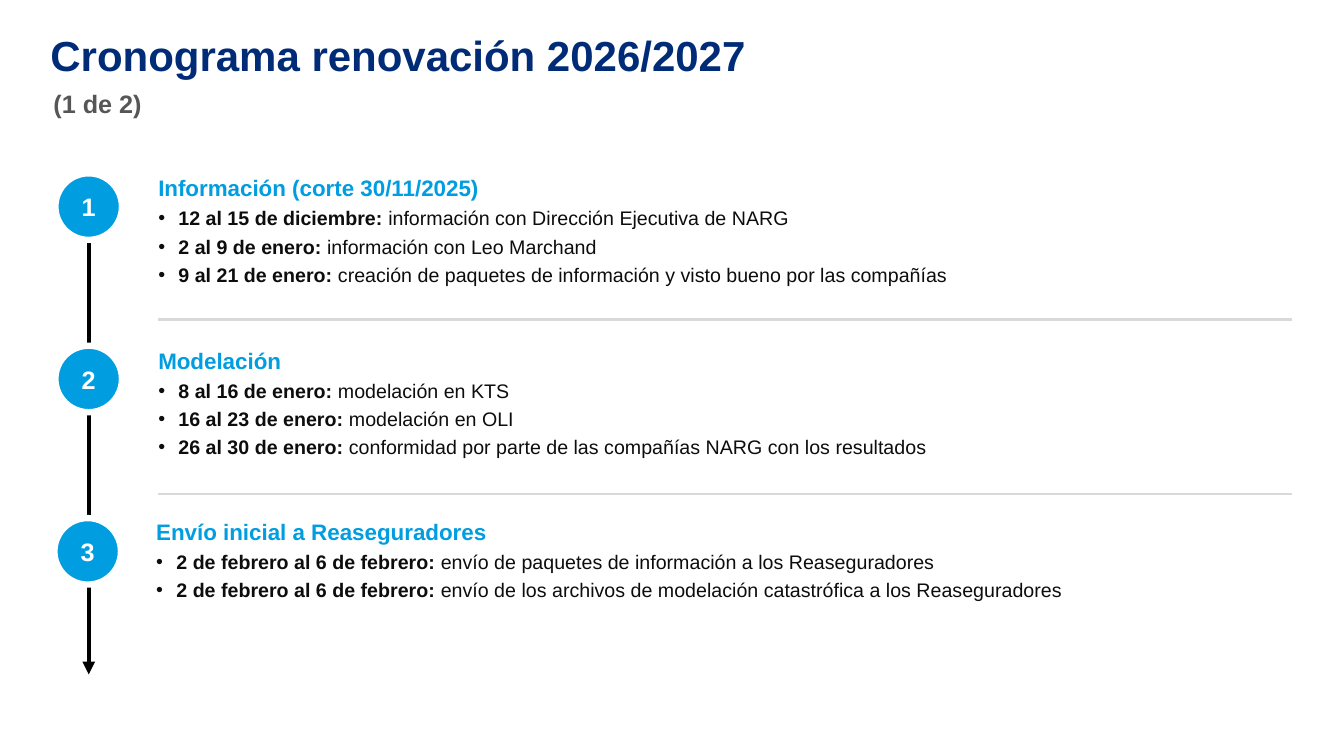
from lxml import etree
from pptx import Presentation
from pptx import util as u
from pptx.dml.color import RGBColor
from pptx.enum import shapes, text
from pptx.oxml.ns import qn

FONT = "Arial"
NAVY, BLUE, GREY, RULE = "002C77", "009DE0", "565656", "D9D9D9"
BLACK, INK, WHITE = "000000", "0D0D0D", "FFFFFF"
CIRCLE = 0.66

# Left edge of the circle, top of the circle, left and top of the text, heading, dated items
STAGES = [
    (0.55, 1.72, 1.57, 1.73, "Información (corte 30/11/2025)", [
        ("12 al 15 de diciembre: ", "información con Dirección Ejecutiva de NARG"),
        ("2 al 9 de enero: ", "información con Leo Marchand"),
        ("9 al 21 de enero: ",
         "creación de paquetes de información y visto bueno por las compañías"),
    ]),
    (0.55, 3.43, 1.57, 3.44, "Modelación", [
        ("8 al 16 de enero: ", "modelación en KTS"),
        ("16 al 23 de enero: ", "modelación en OLI"),
        ("26 al 30 de enero: ",
         "conformidad por parte de las compañías NARG con los resultados"),
    ]),
    (0.54, 5.14, 1.55, 5.14, "Envío inicial a Reaseguradores", [
        ("2 de febrero al 6 de febrero: ",
         "envío de paquetes de información a los Reaseguradores"),
        ("2 de febrero al 6 de febrero: ",
         "envío de los archivos de modelación catastrófica a los Reaseguradores"),
    ]),
]


def color(value):
    return RGBColor.from_string(value)


def add_span(para, words, size, tint, bold=True):
    span = para.add_run()
    span.text = words
    formats = {"name": FONT, "size": u.Pt(size), "bold": bold}
    for name, value in formats.items():
        setattr(span.font, name, value)
    span.font.color.rgb = color(tint)


def set_frame(frame, wrap=True, anchor=text.MSO_ANCHOR.TOP):
    formats = {"margin_left": 0, "margin_top": 0, "margin_right": 0,
               "margin_bottom": 0, "word_wrap": wrap, "vertical_anchor": anchor}
    for name, value in formats.items():
        setattr(frame, name, value)
    return frame


def add_text(page, left, top, width, height):
    box = page.shapes.add_textbox(*map(u.Inches, (left, top, width, height)))
    return set_frame(box.text_frame)


def add_line(page, start, end, tint, width):
    line = page.shapes.add_connector(
        shapes.MSO_CONNECTOR.STRAIGHT, *map(u.Inches, start + end))
    line.line.color.rgb = color(tint)
    line.line.width = u.Pt(width)
    etree.SubElement(line.element.spPr, qn("a:effectLst"))
    return line


def add_bullet(para):
    properties = para._p.get_or_add_pPr()
    indent = u.Inches(0.2)
    properties.set("marL", str(indent))
    properties.set("indent", str(-indent))
    etree.SubElement(properties, qn("a:buFont")).set("typeface", FONT)
    etree.SubElement(properties, qn("a:buChar")).set("char", "•")


def add_header(page, left, top, width):
    title = add_text(page, left, top, width, 0.54).paragraphs[0]
    title.line_spacing = 0.8
    add_span(title, "Cronograma renovación 2026/2027", 30, NAVY)
    subtitle = add_text(page, left + 0.03, top + 0.49, width - 0.03, 0.35)
    add_span(subtitle.paragraphs[0], "(1 de 2)", 18, GREY)


def add_timeline(page, center, top, bottom):
    arrow = add_line(page, (center, top), (center, bottom), BLACK, 3)
    tail = etree.SubElement(arrow.line._get_or_add_ln(), qn("a:tailEnd"))
    tail.set("type", "triangle")


def add_number(page, left, top, number):
    circle = page.shapes.add_shape(
        shapes.MSO_SHAPE.OVAL, *map(u.Inches, (left, top, CIRCLE, CIRCLE)))
    circle.shadow.inherit = False
    circle.fill.solid()
    circle.fill.fore_color.rgb = color(BLUE)
    circle.line.color.rgb = color(WHITE)
    circle.line.width = u.Pt(4.5)
    frame = set_frame(circle.text_frame, False, text.MSO_ANCHOR.MIDDLE)
    para = frame.paragraphs[0]
    para.alignment = text.PP_ALIGN.CENTER
    add_span(para, str(number), 18, WHITE)


def add_stage_text(page, left, top, heading, items):
    frame = add_text(page, left, top, 11.24, 1.34)
    add_span(frame.paragraphs[0], heading, 16, BLUE)
    for dates, task in items:
        para = frame.add_paragraph()
        para.space_before = u.Pt(3.5)
        add_bullet(para)
        add_span(para, dates, 14, INK)
        add_span(para, task, 14, INK, False)


def main():
    deck = Presentation()
    deck.slide_width, deck.slide_height = u.Inches(13.33), u.Inches(7.5)
    page = deck.slides.add_slide(deck.slide_layouts[6])

    # Title and timeline arrow
    add_header(page, 0.5, 0.39, 12.31)
    add_timeline(page, 0.88, 2.13, 6.69)

    # Numbered stages
    for number, stage in enumerate(STAGES, 1):
        circle_left, circle_top, left, top, heading, items = stage
        add_number(page, circle_left, circle_top, number)
        add_stage_text(page, left, top, heading, items)

    # Rules between stages
    for height in (3.17, 4.9):
        add_line(page, (1.57, height), (12.81, height), RULE, 1.5)

    deck.save("out.pptx")


if __name__ == "__main__":
    main()
